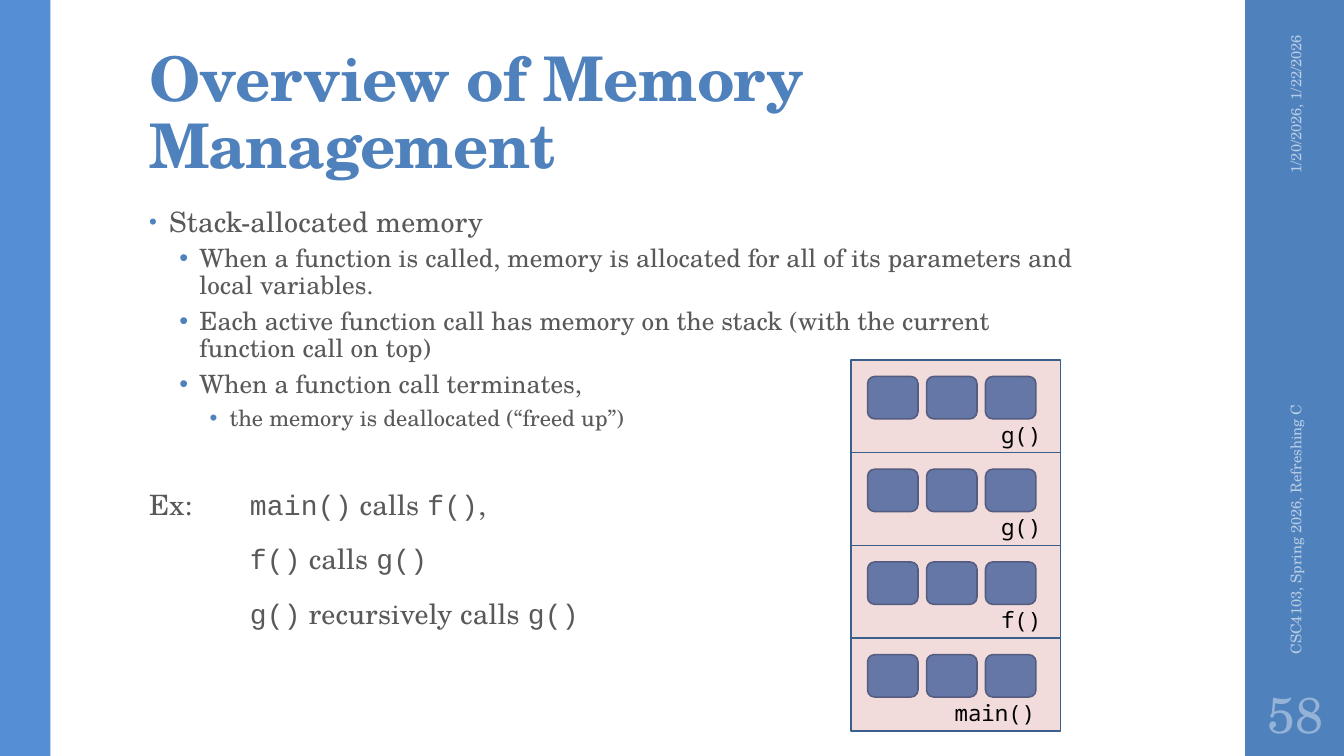
from lxml import etree
from pptx import Presentation
from pptx.dml.color import RGBColor
from pptx.enum.shapes import MSO_SHAPE
from pptx.enum.text import MSO_ANCHOR, MSO_AUTO_SIZE, PP_ALIGN
from pptx.oxml.ns import qn
from pptx.util import Inches, Pt

RECT, ROUND = MSO_SHAPE.RECTANGLE, MSO_SHAPE.ROUNDED_RECTANGLE
TOP, MIDDLE, BOTTOM = MSO_ANCHOR.TOP, MSO_ANCHOR.MIDDLE, MSO_ANCHOR.BOTTOM
LEFT, CENTER, RIGHT = PP_ALIGN.LEFT, PP_ALIGN.CENTER, PP_ALIGN.RIGHT

THEME = {
    "serif": "TeX Gyre Schola", "code": "Courier New", "mono": "Noto Sans Mono",
    "blue": "4F81BD", "band": "558ED5", "text": "595959", "black": "000000",
    "edge": "3A5F8C", "frame": "C0504D", "pale": "B9CDE5", "number": "95B3D7",
    "title_size": 44, "body_size": 20, "sub_size": 18, "detail_size": 16,
    "label_size": 16, "side_size": 10.5, "number_size": 36,
}

TITLE = "Overview of Memory Management"
BULLETS = [
    (0, "Stack-allocated memory"),
    (1, "When a function is called, memory is allocated for all of its parameters and local variables."),
    (1, "Each active function call has memory on the stack (with the current function call on top)"),
    (1, "When a function call terminates,"),
    (2, "the memory is deallocated (“freed up”)"),
]
EXAMPLE = [
    [("serif", "Ex:\t"), ("code", "main()"), ("serif", " calls "), ("code", "f()"), ("serif", ",")],
    [("code", "f()"), ("serif", " calls "), ("code", "g()")],
    [("code", "g()"), ("serif", " recursively calls "), ("code", "g()")],
]
STACK = [("g()", 9.83, 0.61), ("g()", 9.83, 0.61), ("f()", 9.83, 0.61), ("main()", 9.37, 1.01)]
BANDS = [((12.35, 0, 1, 7.5), "blue"), ((0, 0, 0.5, 7.5), "band")]
SIDE_NOTES = [
    ("1/20/2026, 1/22/2026", (11.81, 1.09, 2.08, 0.4), RIGHT),
    ("CSC4103, Spring 2026, Refreshing C", (10.89, 4.43, 3.92, 0.4), LEFT),
]
PAGE = "58"

LEVELS = [
    {"size": "body_size", "margin": 0.2, "bullet": 80, "track": 10,
     "format": {"line_spacing": 0.95, "space_after": Pt(2)}},
    {"size": "sub_size", "margin": 0.5, "bullet": 100, "track": 0,
     "format": {"line_spacing": 0.9, "space_before": Pt(3), "space_after": Pt(3)}},
    {"size": "detail_size", "margin": 0.8, "bullet": 100, "track": 0,
     "format": {"line_spacing": 0.9, "space_before": Pt(3), "space_after": Pt(3)}},
]
FRAME_LEFT, FRAME_TOP, FRAME_W, FRAME_H = 8.44, 3.57, 2.08, 0.92
CELL_W, CELL_H, CELL_PITCH, CELL_INSET = 0.5, 0.42, 0.585, 0.165


def rgb(name):
    return RGBColor.from_string(THEME[name])


def apply(target, values):
    for name, value in values.items():
        setattr(target, name, value)


def add_run(p, text, font, size, color, bold=False, track=0):
    r = p.add_run()
    r.text = text
    apply(r.font, {"name": THEME[font], "size": Pt(THEME[size]), "bold": bold})
    r.font.color.rgb = rgb(color)
    r._r.get_or_add_rPr().set("spc", str(track))


def set_indent(p, margin, first):
    pPr = p._p.get_or_add_pPr()
    pPr.set("marL", str(Inches(margin)))
    pPr.set("indent", str(Inches(first)))
    return pPr


def add_bullet(p, margin, percent):
    pPr = set_indent(p, margin, -0.2)
    color = etree.SubElement(pPr, qn("a:buClr"))
    etree.SubElement(color, qn("a:srgbClr")).set("val", THEME["blue"])
    etree.SubElement(pPr, qn("a:buSzPct")).set("val", str(percent * 1000))
    etree.SubElement(pPr, qn("a:buFont")).set("typeface", "Arial")
    etree.SubElement(pPr, qn("a:buChar")).set("char", "•")


def add_box(slide, at, anchor=TOP, wrap=True):
    s = slide.shapes.add_textbox(*map(Inches, at))
    apply(s.text_frame, {"word_wrap": wrap, "vertical_anchor": anchor})
    return s


def add_block(slide, kind, at, fill, line=None, alpha=None):
    s = slide.shapes.add_shape(kind, *map(Inches, at))
    s.shadow.inherit = False
    s.fill.solid()
    s.fill.fore_color.rgb = rgb(fill)
    if alpha:
        color = s.fill._xPr.find(qn("a:solidFill"))[0]
        etree.SubElement(color, qn("a:alpha")).set("val", str(alpha * 1000))
    if line:
        s.line.color.rgb = rgb(line)
        s.line.width = Pt(1.1)
    else:
        s.line.fill.background()


def add_title(slide):
    s = slide.shapes.title
    apply(s, dict(zip(("left", "top", "width", "height"), map(Inches, (1.38, 0.32, 10.6, 1.53)))))
    tf = s.text_frame
    apply(tf, {"word_wrap": True, "auto_size": MSO_AUTO_SIZE.NONE, "vertical_anchor": BOTTOM,
               "margin_top": Inches(0.03), "margin_bottom": Inches(0.05)})
    p = tf.paragraphs[0]
    apply(p, {"alignment": LEFT, "line_spacing": 0.9})
    add_run(p, TITLE, "serif", "title_size", "blue", True, -50)


def add_body(slide):
    tf = add_box(slide, (1.38, 2, 9.4, 4.76)).text_frame
    for i, (level, text) in enumerate(BULLETS):
        p = tf.add_paragraph() if i else tf.paragraphs[0]
        style = LEVELS[level]
        add_bullet(p, style["margin"], style["bullet"])
        apply(p, {"level": level, **style["format"]})
        add_run(p, text, "serif", style["size"], "text", track=style["track"])
    for i, parts in enumerate(EXAMPLE):
        p = tf.add_paragraph()
        set_indent(p, 1, 0 if i else -1)
        apply(p, {"line_spacing": 0.95, "space_before": Pt(14 if i else 39), "space_after": Pt(2)})
        for font, text in parts:
            add_run(p, text, font, "body_size", "text", track=10)


def add_stack(slide):
    for row, (name, left, width) in reversed(list(enumerate(STACK))):
        top = FRAME_TOP + row * FRAME_H
        for col in range(3):
            x = FRAME_LEFT + CELL_INSET + col * CELL_PITCH
            add_block(slide, ROUND, (x, top + CELL_INSET, CELL_W, CELL_H), "blue", "edge")
        add_block(slide, RECT, (FRAME_LEFT, top, FRAME_W, FRAME_H), "frame", "edge", 20)
        s = add_box(slide, (left, top + 0.555, width, 0.37), wrap=False)
        add_run(s.text_frame.paragraphs[0], name, "mono", "label_size", "black")


def add_side(slide):
    for text, at, align in SIDE_NOTES:
        s = add_box(slide, at, MIDDLE)
        s.rotation = 270
        p = s.text_frame.paragraphs[0]
        p.alignment = align
        add_run(p, text, "serif", "side_size", "pale")
    tf = add_box(slide, (12.35, 6.75, 1, 0.65), MIDDLE).text_frame
    apply(tf, {"margin_left": Inches(0.05), "margin_right": Inches(0.05)})
    p = tf.paragraphs[0]
    p.alignment = CENTER
    add_run(p, PAGE, "serif", "number_size", "number")


def main():
    prs = Presentation()
    apply(prs, {"slide_width": Inches(13.33), "slide_height": Inches(7.5)})
    slide = prs.slides.add_slide(prs.slide_layouts[5])
    for at, fill in BANDS:
        add_block(slide, RECT, at, fill)
    add_title(slide)
    add_body(slide)
    add_stack(slide)
    add_side(slide)
    prs.save("out.pptx")


if __name__ == "__main__":
    main()
